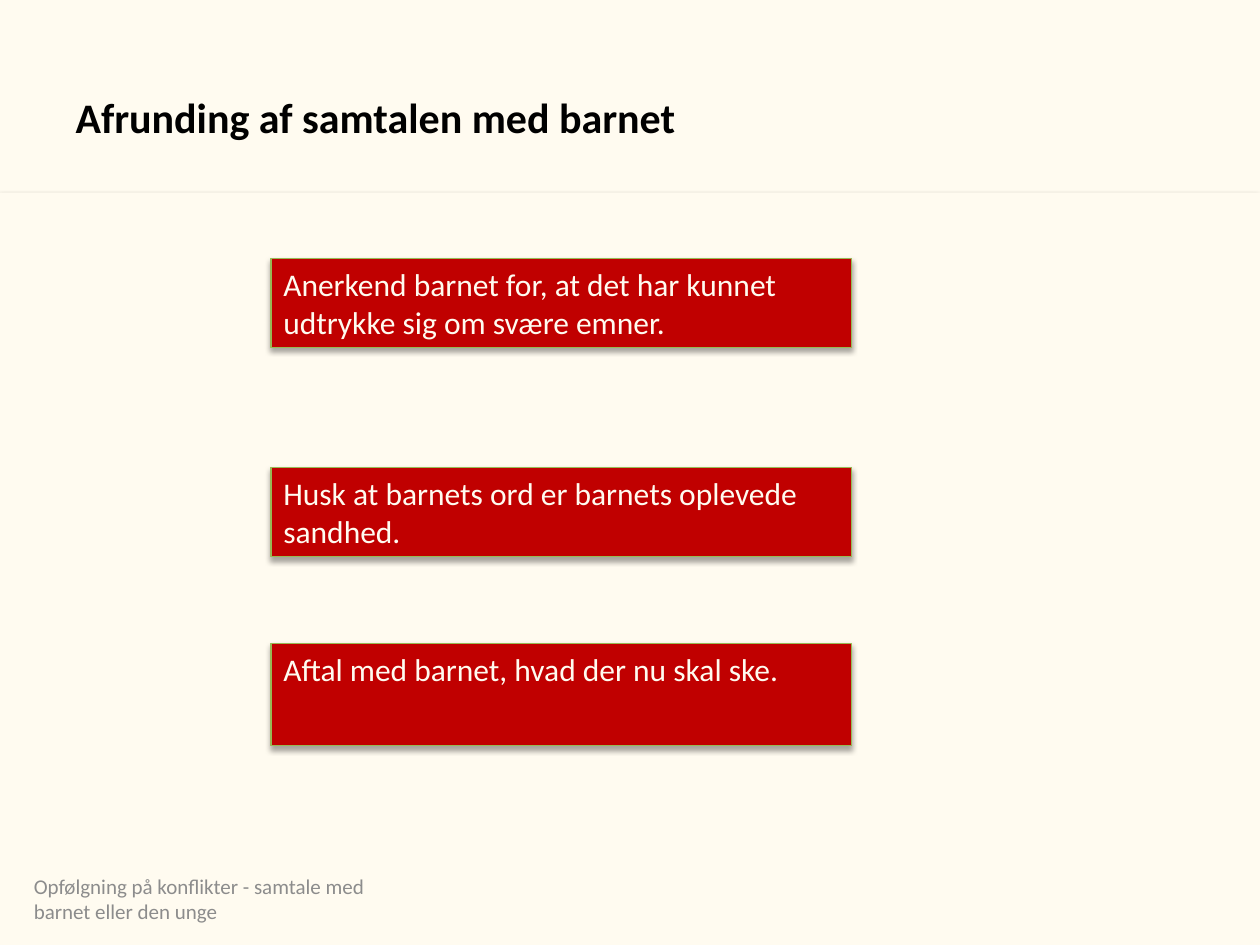
from dataclasses import dataclass

from pptx import Presentation
from pptx.dml.color import RGBColor
from pptx.enum.shapes import MSO_SHAPE
from pptx.enum.text import MSO_ANCHOR, PP_ALIGN
from pptx.oxml import parse_xml
from pptx.oxml.ns import nsdecls
from pptx.util import Inches, Pt


@dataclass(frozen=True)
class Theme:
    """Colours, font and type sizes of the slide."""
    font: str = "Calibri"
    cream: str = "FFFBF0"
    red: str = "C00000"
    green: str = "98B955"
    black: str = "000000"
    grey: str = "8C8C8C"
    title: int = 24
    body: int = 18
    foot: int = 12


THEME = Theme()
CARDS = (
    (2.05, 0.71, MSO_ANCHOR.MIDDLE,
     "Anerkend barnet for, at det har kunnet udtrykke sig om svære emner."),
    (3.71, 0.71, MSO_ANCHOR.MIDDLE,
     "Husk at barnets ord er barnets oplevede sandhed."),
    (5.11, 0.81, MSO_ANCHOR.TOP,
     "Aftal med barnet, hvad der nu skal ske."),
)


def paint(fill, color):
    """Give a fill one solid colour."""
    fill.solid()
    fill.fore_color.rgb = RGBColor.from_string(color)


def write(shape, text, size, color, bold=False, anchor=MSO_ANCHOR.MIDDLE):
    """Set left-aligned wrapped text in a shape."""
    frame = shape.text_frame
    frame.text = text
    frame.word_wrap = True
    frame.vertical_anchor = anchor
    line = frame.paragraphs[0]
    line.alignment = PP_ALIGN.LEFT
    font = line.runs[0].font
    font.name, font.size, font.bold = THEME.font, Pt(size), bold
    font.color.rgb = RGBColor.from_string(color)


def block(slide, box, color):
    """Add a filled rectangle with a soft shadow below it."""
    shape = slide.shapes.add_shape(MSO_SHAPE.RECTANGLE, *map(Inches, box))
    paint(shape.fill, color)
    shape.line.fill.background()
    shape.shadow.inherit = False
    cast = parse_xml(
        f'<a:outerShdw {nsdecls("a")} blurRad="{Pt(3.1)}" dist="{Pt(1.8)}" '
        f'dir="5400000" rotWithShape="0"><a:srgbClr val="{THEME.black}">'
        '<a:alpha val="35000"/></a:srgbClr></a:outerShdw>')
    shape.element.spPr.find("{*}effectLst").append(cast)
    return shape


def panel(slide, box):
    """Lay the body panel behind everything else."""
    shape = block(slide, box, THEME.cream)
    slide.shapes.element.insert(2, shape.element)


def head(slide, box):
    """Place the title."""
    title = slide.shapes.title
    title.left, title.top, title.width, title.height = map(Inches, box)
    write(title, "Afrunding af samtalen med barnet",
          THEME.title, THEME.black, bold=True)


def card(slide, box, text, anchor):
    """Add one red advice card."""
    shape = block(slide, box, THEME.red)
    paint(shape.line.fill, THEME.green)
    shape.line.width = Pt(0.75)
    write(shape, text, THEME.body, THEME.cream, anchor=anchor)


def foot(slide, box):
    """Add the footer text."""
    shape = slide.shapes.add_textbox(*map(Inches, box))
    write(shape, "Opfølgning på konflikter - samtale med barnet eller den unge",
          THEME.foot, THEME.grey)


def main():
    """Build and save the slide."""
    deck = Presentation()
    deck.slide_width, deck.slide_height = Inches(10), Inches(7.5)
    slide = deck.slides.add_slide(deck.slide_layouts[5])
    paint(slide.background.fill, THEME.cream)
    panel(slide, (0, 1.53, 10, 5.97))
    head(slide, (0.5, 0.3, 9, 1.25))
    for top, height, anchor, text in CARDS:
        card(slide, (2.15, top, 4.61, height), text, anchor)
    foot(slide, (0.17, 6.93, 3.17, 0.4))
    deck.save("out.pptx")


if __name__ == "__main__":
    main()
